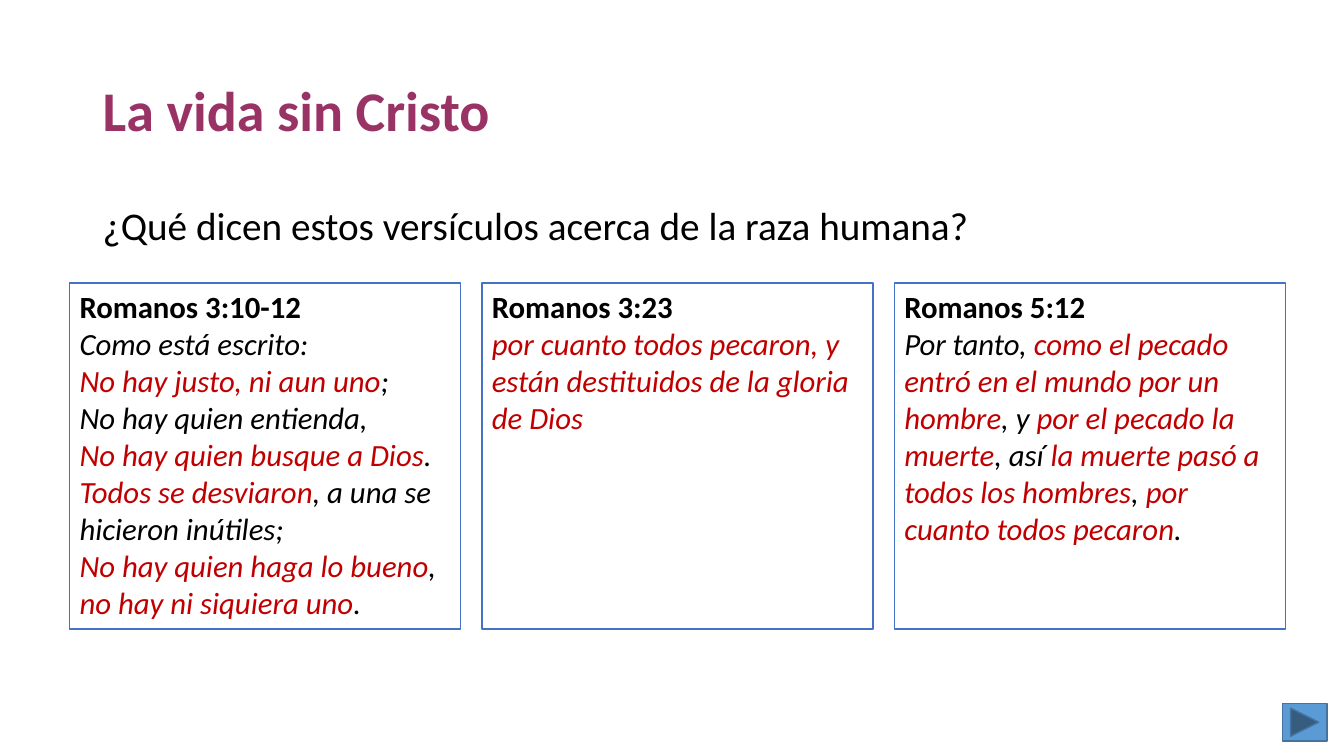
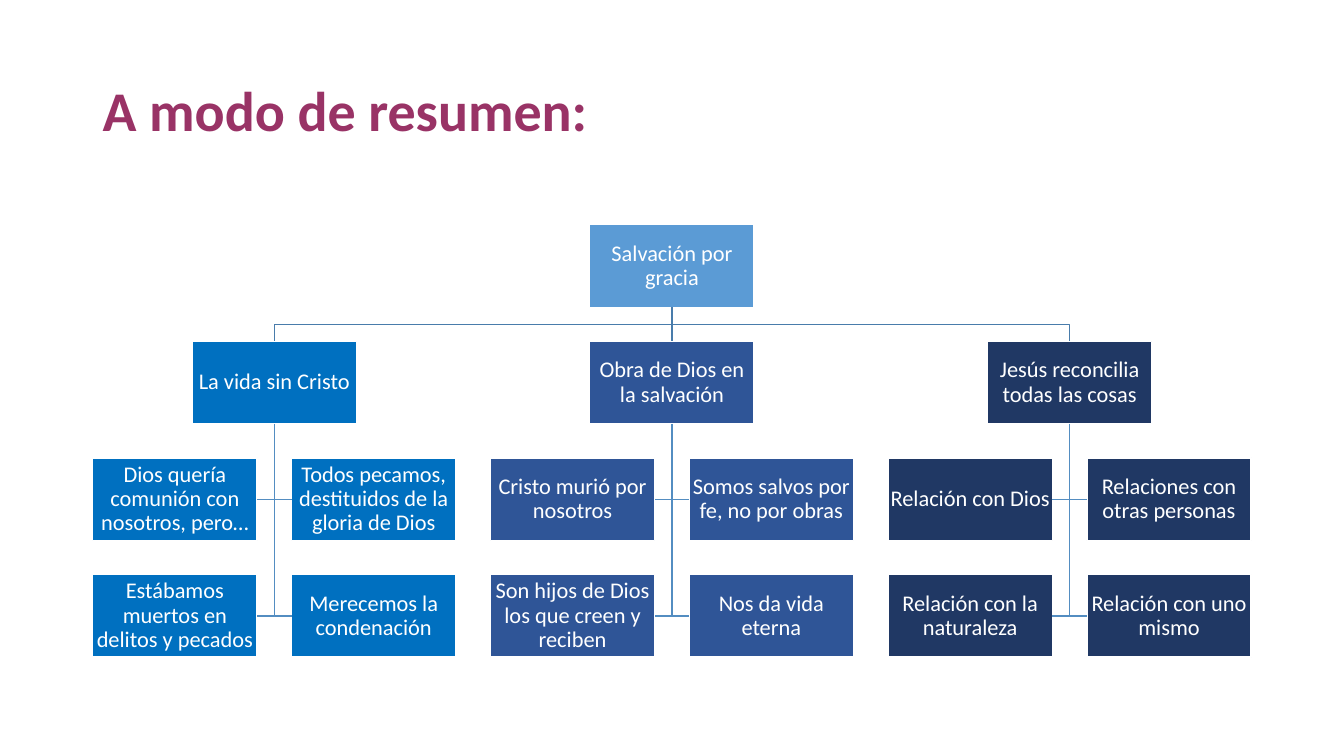
from lxml.etree import SubElement
from pptx import Presentation
from pptx.dml.color import RGBColor
from pptx.enum.shapes import MSO_CONNECTOR, MSO_SHAPE
from pptx.enum.text import MSO_ANCHOR, PP_ALIGN
from pptx.oxml.ns import qn
from pptx.util import Inches, Pt

# Shared look
FONT = "Calibri"
PLUM = RGBColor(0x99, 0x33, 0x66)
BLACK = RGBColor(0, 0, 0)
WHITE = RGBColor(0xFF, 0xFF, 0xFF)
RED = RGBColor(0xC0, 0, 0)
EDGE = RGBColor(0x44, 0x72, 0xC4)
SKY = RGBColor(0x5B, 0x9B, 0xD5)
RIM = RGBColor(0x43, 0x73, 0x9E)
RAIL = RGBColor(0x49, 0x7C, 0xAB)
TWIG = RGBColor(0x53, 0x8D, 0xC1)
BLUE = RGBColor(0, 0x70, 0xC0)
ROYAL = RGBColor(0x2F, 0x55, 0x97)
NAVY = RGBColor(0x20, 0x38, 0x64)

# Sides of a rectangle
TOP, LEFT, BOTTOM, RIGHT = range(4)

# Tree grid: six columns, four rows
WIDE, HIGH = 1.63, 0.82
COL = (10.78 - 0.92) / 5
ROW = (5.7 - 2.23) / 3

# Text between asterisks is red
CARDS = [
    ("Romanos 3:10-12", [
        "Como está escrito:",
        "*No hay justo, ni aun uno*;",
        "No hay quien entienda,",
        "*No hay quien busque a Dios*.",
        "*Todos se desviaron*, a una se hicieron inútiles;",
        "*No hay quien haga lo bueno*, *no hay ni siquiera uno*."]),
    ("Romanos 3:23", [
        "*por cuanto todos pecaron, y están destituidos de la gloria "
        "de Dios*"]),
    ("Romanos 5:12", [
        "Por tanto, *como el pecado entró en el mundo por un hombre*, y "
        "*por el pecado la muerte*, así *la muerte pasó a todos los "
        "hombres*, *por cuanto todos pecaron*."]),
]

# Head, colour and leaves of each branch
TREE = [
    ("La vida sin Cristo", BLUE, [
        "Dios quería comunión con nosotros, pero…",
        "Todos pecamos, destituidos de la gloria de Dios",
        "Estábamos muertos en delitos y pecados",
        "Merecemos la condenación"]),
    ("Obra de Dios en la salvación", ROYAL, [
        "Cristo murió por nosotros",
        "Somos salvos por fe, no por obras",
        "Son hijos de Dios los que creen y reciben",
        "Nos da vida eterna"]),
    ("Jesús reconcilia todas las cosas", NAVY, [
        "Relación con Dios",
        "Relaciones con otras personas",
        "Relación con la naturaleza",
        "Relación con uno mismo"]),
]


def write(frame, text, size=22, color=BLACK, bold=False, italic=False,
          align=PP_ALIGN.LEFT, space=1.0):
    """Add one paragraph; parts between asterisks turn red."""
    para = frame.add_paragraph() if frame.text else frame.paragraphs[0]
    para.alignment = align
    para.line_spacing = space
    for i, part in enumerate(text.split("*")):
        if part:
            run = para.add_run()
            run.text = part
            font = run.font
            font.name, font.size = FONT, Pt(size)
            font.bold, font.italic = bold, italic
            font.color.rgb = RED if i % 2 else color


def label(slide, text, top, high, anchor=MSO_ANCHOR.TOP, **style):
    box = slide.shapes.add_textbox(
        Inches(0.92), Inches(top), Inches(11.5), Inches(high))
    frame = box.text_frame
    frame.word_wrap = True
    frame.vertical_anchor = anchor
    write(frame, text, space=0.9, **style)


def start(deck, title):
    """Add a blank slide with the shared title."""
    slide = deck.slides.add_slide(deck.slide_layouts[6])
    label(slide, title, 0.4, 1.45, MSO_ANCHOR.MIDDLE,
          size=40, color=PLUM, bold=True)
    return slide


def stroke(shape, color):
    shape.line.color.rgb = color
    shape.line.width = Pt(1)


def block(slide, x, y, wide, high, fill, line, kind=MSO_SHAPE.RECTANGLE):
    shape = slide.shapes.add_shape(
        kind, Inches(x), Inches(y), Inches(wide), Inches(high))
    shape.shadow.inherit = False
    shape.fill.solid()
    shape.fill.fore_color.rgb = fill
    stroke(shape, line)
    shape.text_frame.word_wrap = True
    return shape


def card(slide, x, title, verse):
    frame = block(slide, x, 2.81, 3.88, 3.43, WHITE, EDGE).text_frame
    frame.vertical_anchor = MSO_ANCHOR.TOP
    write(frame, title, bold=True)
    for line in verse:
        write(frame, line, italic=True)


def node(slide, col, row, text, fill):
    """Place a tree box on the grid of columns and rows."""
    shape = block(slide, 0.92 + COL * col, 2.23 + ROW * row,
                  WIDE, HIGH, fill, WHITE)
    frame = shape.text_frame
    frame.margin_left = frame.margin_right = Inches(0.01)
    frame.margin_top = frame.margin_bottom = Inches(0.01)
    frame.vertical_anchor = MSO_ANCHOR.MIDDLE
    write(frame, text, size=16, color=WHITE, align=PP_ALIGN.CENTER, space=0.9)
    return shape


def spot(shape, side):
    """Return the middle of one side of a box."""
    x = shape.left + shape.width // 2
    y = shape.top + shape.height // 2
    return {TOP: (x, shape.top), LEFT: (shape.left, y),
            BOTTOM: (x, shape.top + shape.height),
            RIGHT: (shape.left + shape.width, y)}[side]


def bend(slide, color, first, *rest):
    """Draw an open line with corners."""
    pen = slide.shapes.build_freeform(*first, scale=1.0)
    pen.add_line_segments(rest, close=False)
    shape = pen.convert_to_shape()
    shape.shadow.inherit = False
    shape.fill.background()
    stroke(shape, color)


def link(slide, upper, lower, color):
    """Join two boxes by a straight line."""
    line = slide.shapes.add_connector(
        MSO_CONNECTOR.STRAIGHT, *spot(upper, BOTTOM), *spot(lower, TOP))
    stroke(line, color)
    SubElement(line._element.spPr, qn("a:effectLst"))
    line.begin_connect(upper, BOTTOM)
    line.end_connect(lower, TOP)


def branch(slide, col, text, fill, leaves):
    """Build a head with its two rows of leaves; return the head."""
    head = node(slide, col + 0.5, 1, text, fill)
    stem = spot(head, BOTTOM)
    for i, leaf in enumerate(leaves):
        box = node(slide, col + i % 2, 2 + i // 2, leaf, fill)
        tip = spot(box, LEFT if i % 2 else RIGHT)
        bend(slide, TWIG, stem, (stem[0], tip[1]), tip)
    return head


def verses(deck):
    slide = start(deck, "La vida sin Cristo")
    label(slide, "¿Qué dicen estos versículos acerca de la raza humana?",
          2, 4.76, size=28)
    for i, (title, verse) in enumerate(CARDS):
        card(slide, 0.69 + 4.09 * i, title, verse)
    # Button to the next slide
    block(slide, 12.72, 6.98, 0.44, 0.37, SKY, RIM,
          MSO_SHAPE.ACTION_BUTTON_FORWARD_OR_NEXT)


def summary(deck):
    slide = start(deck, "A modo de resumen:")
    root = node(slide, 2.5, 0, "Salvación por gracia", SKY)
    heads = [branch(slide, 2 * i, *part) for i, part in enumerate(TREE)]
    first, mid, last = heads
    # Lines from the root to the heads
    link(slide, root, mid, RAIL)
    stem = spot(root, BOTTOM)
    level = (stem[1] + mid.top) // 2
    for head in (first, last):
        tip = spot(head, TOP)
        bend(slide, RAIL, stem, (stem[0], level), (tip[0], level), tip)


def main():
    deck = Presentation()
    deck.slide_width, deck.slide_height = Inches(13.33), Inches(7.5)
    verses(deck)
    summary(deck)
    deck.save("out.pptx")


if __name__ == "__main__":
    main()
